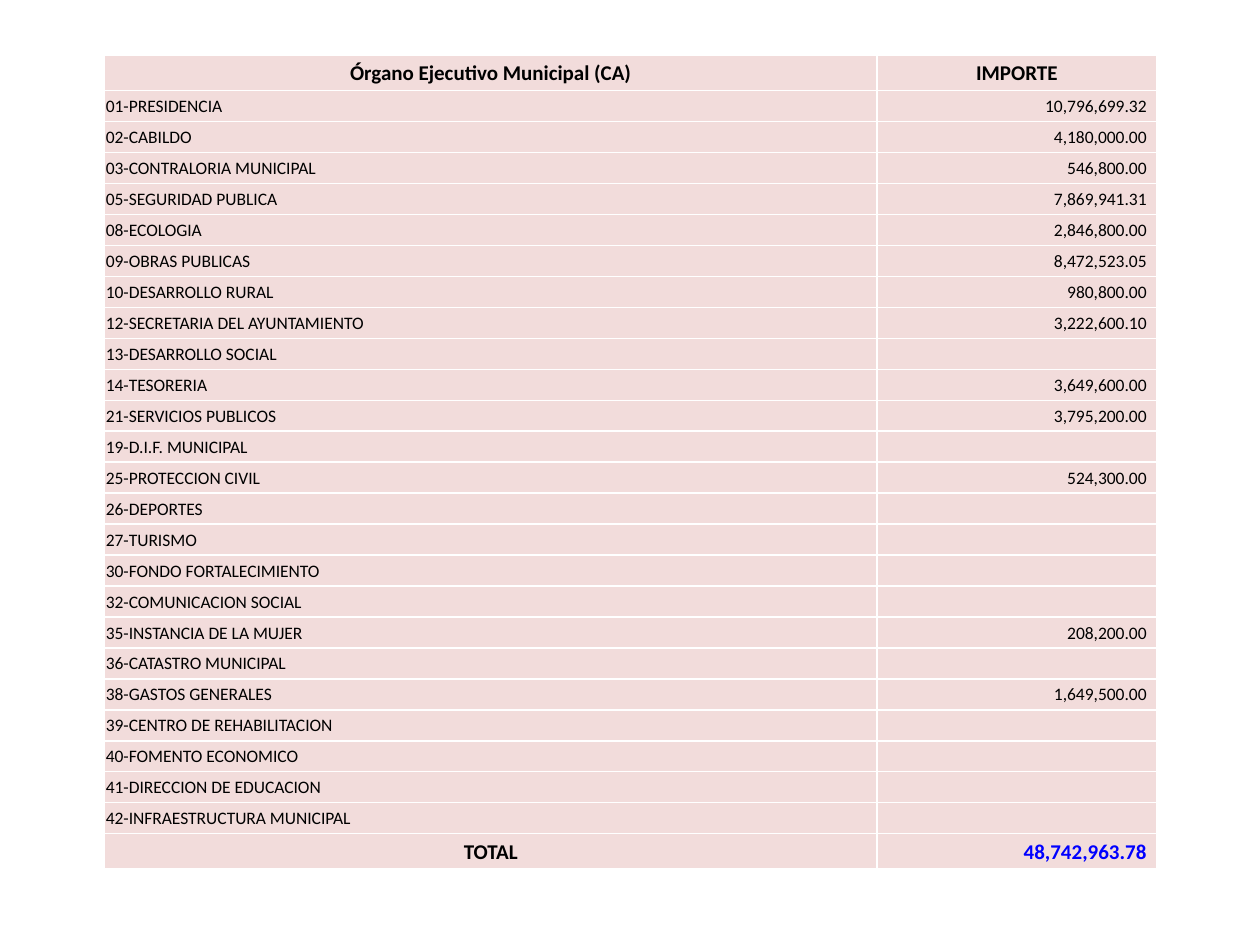
from lxml.etree import SubElement
from pptx import Presentation
from pptx.dml.color import RGBColor
from pptx.enum.text import MSO_ANCHOR, PP_ALIGN
from pptx.oxml.ns import qn
from pptx.util import Inches, Pt

PINK = RGBColor(0xF2, 0xDC, 0xDB)
WHITE = RGBColor(0xFF, 0xFF, 0xFF)
BLACK = RGBColor(0x00, 0x00, 0x00)
BLUE = RGBColor(0x00, 0x00, 0xFF)

HEADER = ("Órgano Ejecutivo Municipal (CA)", "IMPORTE")
DEPARTMENTS = [
    ("01-PRESIDENCIA", "10,796,699.32"),
    ("02-CABILDO", "4,180,000.00"),
    ("03-CONTRALORIA MUNICIPAL", "546,800.00"),
    ("05-SEGURIDAD PUBLICA", "7,869,941.31"),
    ("08-ECOLOGIA", "2,846,800.00"),
    ("09-OBRAS PUBLICAS", "8,472,523.05"),
    ("10-DESARROLLO RURAL", "980,800.00"),
    ("12-SECRETARIA DEL AYUNTAMIENTO", "3,222,600.10"),
    ("13-DESARROLLO SOCIAL", ""),
    ("14-TESORERIA", "3,649,600.00"),
    ("21-SERVICIOS PUBLICOS", "3,795,200.00"),
    ("19-D.I.F. MUNICIPAL", ""),
    ("25-PROTECCION CIVIL", "524,300.00"),
    ("26-DEPORTES", ""),
    ("27-TURISMO", ""),
    ("30-FONDO FORTALECIMIENTO", ""),
    ("32-COMUNICACION SOCIAL", ""),
    ("35-INSTANCIA DE LA MUJER", "208,200.00"),
    ("36-CATASTRO MUNICIPAL", ""),
    ("38-GASTOS GENERALES", "1,649,500.00"),
    ("39-CENTRO DE REHABILITACION", ""),
    ("40-FOMENTO ECONOMICO", ""),
    ("41-DIRECCION DE EDUCACION", ""),
    ("42-INFRAESTRUCTURA MUNICIPAL", ""),
]
TOTAL = ("TOTAL", "48,742,963.78")


class BudgetSlide:
    font_name = "Calibri"
    body_size, strong_size = 10, 12

    def __init__(self, prs):
        self.slide = prs.slides.add_slide(prs.slide_layouts[6])

    def table(self, left, top, col_widths, row_heights):
        frame = self.slide.shapes.add_table(
            len(row_heights), len(col_widths), Inches(left), Inches(top),
            Inches(sum(col_widths)), Inches(sum(row_heights)))
        table = frame.table
        for column, width in zip(table.columns, col_widths):
            column.width = Inches(width)
        for row, height in zip(table.rows, row_heights):
            row.height = Inches(height)
        return table

    def borders(self, cell):
        tc_pr = cell._tc.get_or_add_tcPr()
        for side in ("a:lnL", "a:lnR", "a:lnT", "a:lnB"):
            line = SubElement(tc_pr, qn(side), w=str(Pt(1)))
            fill = SubElement(line, qn("a:solidFill"))
            SubElement(fill, qn("a:srgbClr"), val=str(WHITE))

    def cell(self, cell, text, align, strong=False, color=BLACK):
        self.borders(cell)
        cell.fill.solid()
        cell.fill.fore_color.rgb = PINK
        cell.vertical_anchor = MSO_ANCHOR.MIDDLE
        cell.margin_left = cell.margin_top = Inches(0.01)
        cell.margin_right = Inches(0.08 if align == PP_ALIGN.RIGHT else 0.01)
        cell.margin_bottom = 0
        size = Pt(self.strong_size if strong else self.body_size)
        p = cell.text_frame.paragraphs[0]
        p.alignment = align
        if text:
            p.text = text
        else:
            # An empty cell needs its own size, or the row would grow
            SubElement(p._p, qn("a:endParaRPr"), sz=str(int(size.pt * 100)))
        p.font.name = self.font_name
        p.font.size = size
        p.font.bold = strong
        p.font.color.rgb = color


def main():
    prs = Presentation()
    prs.slide_width, prs.slide_height = Inches(10), Inches(7.5)
    s = BudgetSlide(prs)

    # Grid: taller header and total rows, the rest shared equally
    height, strong_height = 6.46, 0.28
    count = len(DEPARTMENTS)
    body_height = (height - 2 * strong_height) / count
    rows = [strong_height] + [body_height] * count + [strong_height]
    table = s.table(0.83, 0.44, (6.13, 2.22), rows)

    # Header
    for col, text in enumerate(HEADER):
        s.cell(table.cell(0, col), text, PP_ALIGN.CENTER, strong=True)

    # Departments
    for row, (name, amount) in enumerate(DEPARTMENTS, start=1):
        s.cell(table.cell(row, 0), name, PP_ALIGN.LEFT)
        s.cell(table.cell(row, 1), amount, PP_ALIGN.RIGHT)

    # Total
    label, amount = TOTAL
    s.cell(table.cell(count + 1, 0), label, PP_ALIGN.CENTER, strong=True)
    s.cell(table.cell(count + 1, 1), amount, PP_ALIGN.RIGHT, strong=True, color=BLUE)

    prs.save("out.pptx")


if __name__ == "__main__":
    main()
